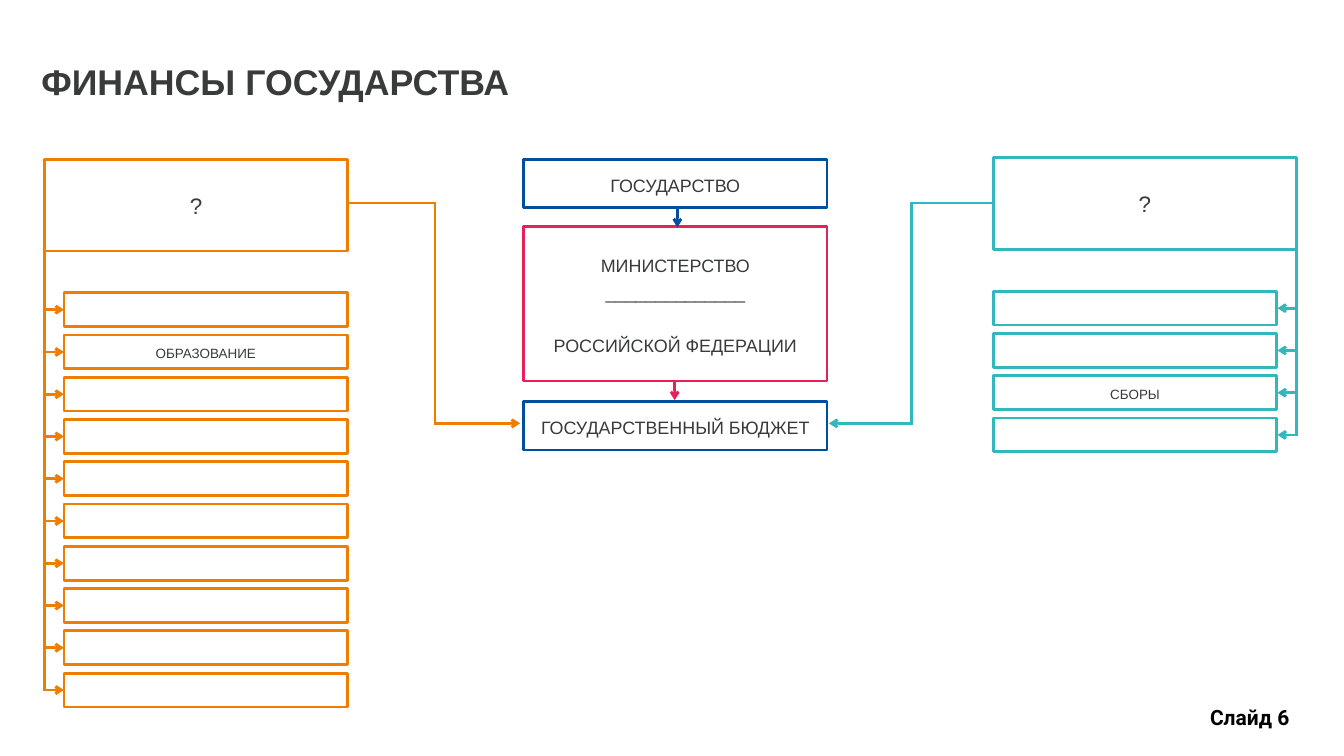
"""Build the state finances diagram slide."""
from lxml.etree import SubElement
from pptx import Presentation
from pptx.dml.color import RGBColor
from pptx.enum.shapes import MSO_CONNECTOR, MSO_SHAPE
from pptx.enum.text import MSO_ANCHOR, MSO_AUTO_SIZE, PP_ALIGN
from pptx.oxml.ns import qn
from pptx.util import Inches, Pt

INK = RGBColor(0x39, 0x3B, 0x3B)
BLACK = RGBColor(0x00, 0x00, 0x00)
BLUE = RGBColor(0x00, 0x4F, 0x9F)
PINK = RGBColor(0xE6, 0x21, 0x5A)
ORANGE = RGBColor(0xEF, 0x7D, 0x00)
TEAL = RGBColor(0x31, 0xB7, 0xBC)

WIDTH, HEIGHT = Inches(26.67), Inches(15)
HEAD_WIDTH, HEAD_HEIGHT = 22.57, 12.13
ITEM_WIDTH, ITEM_HEIGHT, ITEM_PITCH = 21.11, 4.47, 5.59
CENTER_LEFT, LINK_ROW, BUDGET_ROW = 38.96, 26.87, 56


def write(frame, text, size=32, font="Arial", color=INK, bold=False,
          align=PP_ALIGN.CENTER, inset=0, small_caps=False, gaps=()):
    """Fill a text frame, one paragraph per line of text."""
    frame.word_wrap = True
    frame.auto_size = MSO_AUTO_SIZE.NONE
    frame.vertical_anchor = MSO_ANCHOR.MIDDLE
    frame.margin_left = frame.margin_right = Inches(inset)
    frame.margin_top = frame.margin_bottom = Inches(inset)
    for index, line in enumerate(text.split("\n")):
        para = frame.add_paragraph() if index else frame.paragraphs[0]
        para.alignment = align
        if index < len(gaps):
            para.space_before = Pt(gaps[index])
        span = para.add_run()
        span.text = line
        span.font.size, span.font.name = Pt(size), font
        span.font.bold = bold
        span.font.color.rgb = color
        if small_caps:
            span.font._element.set("cap", "small")


class Diagram:
    """Holds the page and line style; lengths are percent of the slide."""

    def __init__(self, page, box_line=4, link_line=3.9):
        """Keep the page and the line widths."""
        self.page = page
        self.box_line, self.link_line = Pt(box_line), Pt(link_line)

    def area(self, left, top, width, height):
        """Turn percent shares into slide lengths."""
        return (int(WIDTH * left / 100), int(HEIGHT * top / 100),
                int(WIDTH * width / 100), int(HEIGHT * height / 100))

    def title(self, text, *place, **style):
        """Place and format the title placeholder."""
        title = self.page.shapes.title
        title.left, title.top, title.width, title.height = self.area(*place)
        write(title.text_frame, text, **style)

    def label(self, text, *place, **style):
        """Add a text box."""
        label = self.page.shapes.add_textbox(*self.area(*place))
        write(label.text_frame, text, **style)

    def box(self, color, *place, text="", **style):
        """Add an outlined box with optional text."""
        box = self.page.shapes.add_shape(MSO_SHAPE.RECTANGLE, *self.area(*place))
        box.shadow.inherit = False
        box.fill.background()
        box.line.color.rgb, box.line.width = color, self.box_line
        if text:
            write(box.text_frame, text, **style)

    def link(self, color, *points):
        """Join two points with a plain line."""
        link = self.page.shapes.add_connector(
            MSO_CONNECTOR.STRAIGHT, *self.area(*points))
        link.line.color.rgb, link.line.width = color, self.link_line
        SubElement(link._element.spPr, qn("a:effectLst"))
        return link

    def arrow(self, color, *points):
        """Join two points with an arrow."""
        outline = self.link(color, *points).line._get_or_add_ln()
        SubElement(outline, qn("a:tailEnd"), type="arrow")

    def branch(self, color, top, head_left, item_left, spine, item_edge, items):
        """Draw a head box and its list of items hung on a spine."""
        self.box(color, head_left, top, HEAD_WIDTH, HEAD_HEIGHT, text="?")
        first = top + 17.66
        middles = []
        for index, text in enumerate(items):
            row = first + index * ITEM_PITCH
            middles.append(row + ITEM_HEIGHT / 2)
            self.box(color, item_left, row, ITEM_WIDTH, ITEM_HEIGHT,
                     text=text, size=24, small_caps=True)
        self.link(color, spine, top + HEAD_HEIGHT, spine, middles[-1] + 0.15)
        for middle in middles:
            self.arrow(color, spine, middle, item_edge, middle)

    def elbow(self, color, start, turn, end):
        """Lead a stepped arrow from a head box to the budget."""
        self.link(color, start, LINK_ROW, turn, LINK_ROW)
        self.link(color, turn, LINK_ROW - 0.18, turn, BUDGET_ROW + 0.18)
        self.arrow(color, turn, BUDGET_ROW, end, BUDGET_ROW)


def main():
    """Build and save the deck."""
    deck = Presentation()
    deck.slide_width, deck.slide_height = WIDTH, HEIGHT
    diagram = Diagram(deck.slides.add_slide(deck.slide_layouts[5]))
    diagram.title("ФИНАНСЫ ГОСУДАРСТВА", 2.85, 7.53, 68.95, 6.47, size=51,
                  bold=True, align=PP_ALIGN.LEFT, inset=0.06)

    ministry = "министерство\n______________\nроссийской федерации"
    for color, top, height, text, gaps in (
            (BLUE, 21.07, 6.4, "государство", ()),
            (PINK, 29.93, 20.47, ministry, (0, 0, 37)),
            (BLUE, 53.13, 6.4, "государственный бюджет", ())):
        diagram.box(color, CENTER_LEFT, top, HEAD_WIDTH, height, text=text,
                    small_caps=True, gaps=gaps)
    diagram.arrow(BLUE, 50.4, 27.6, 50.4, 30.07)
    diagram.arrow(PINK, 50.2, 50.53, 50.2, 52.93)

    spending = ["", "образование"] + [""] * 8
    income = ["", "", "сборы", ""]
    diagram.branch(ORANGE, 21.07, 3.3, 4.76, 3.3, 4.76, spending)
    diagram.branch(TEAL, 20.87, 73.9, 73.9, 96.47, 95.05, income)
    diagram.elbow(ORANGE, 25.87, 32.36, 38.7)
    diagram.elbow(TEAL, 73.9, 67.83, 61.68)

    diagram.label("Слайд 6", 86.65, 92.73, 12.67, 4.13, size=30,
                  font="Roboto", color=BLACK, bold=True, inset=0.06)
    deck.save("out.pptx")


if __name__ == "__main__":
    main()
